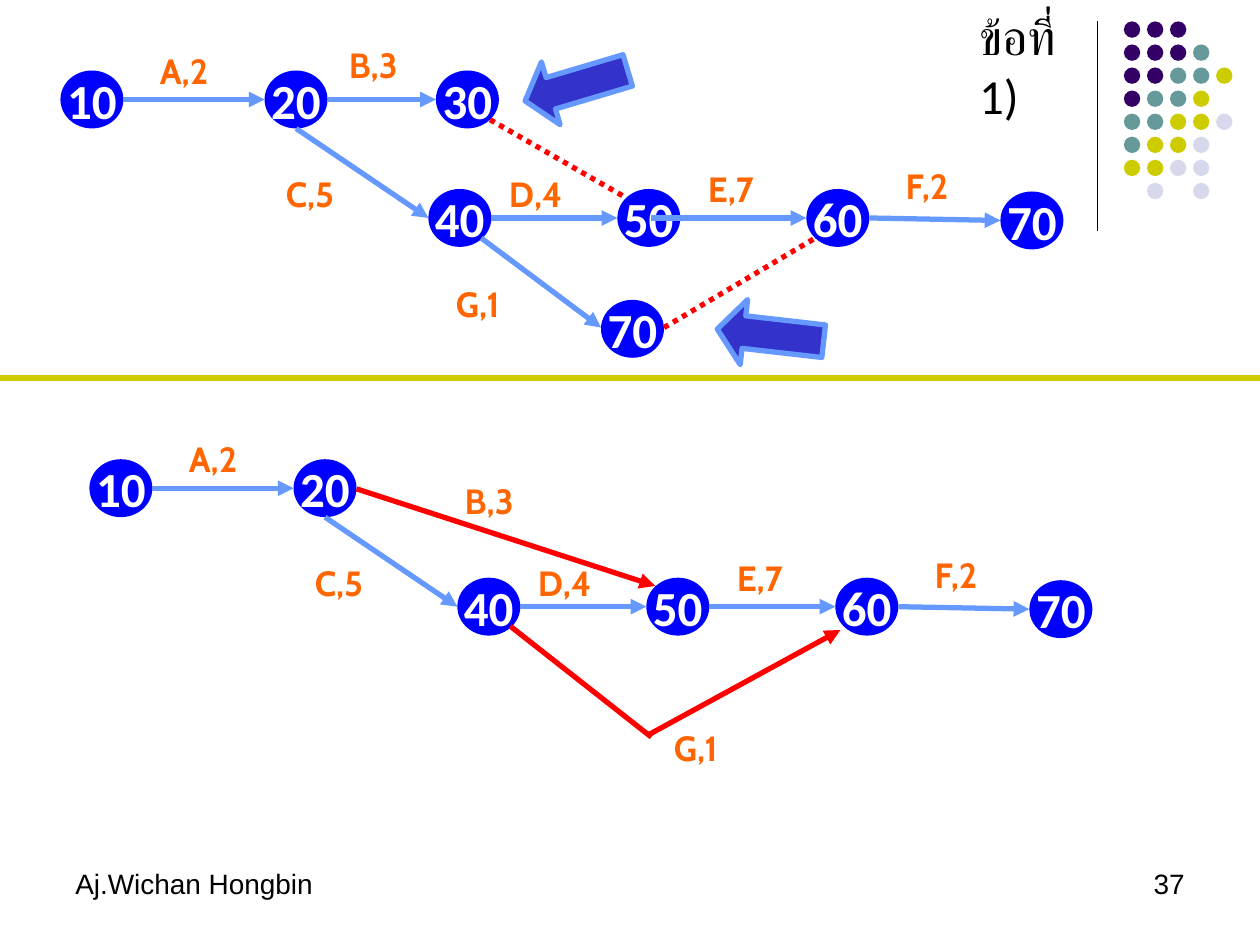
import dataclasses

import pptx
import pptx.dml.color
import pptx.enum.dml
import pptx.enum.shapes
import pptx.enum.text
import pptx.oxml.ns
import pptx.util
import lxml.etree

ALIGN = pptx.enum.text.PP_ALIGN
ANCHOR = pptx.enum.text.MSO_ANCHOR
SHAPE = pptx.enum.shapes.MSO_SHAPE
DOTTED = pptx.enum.dml.MSO_LINE.ROUND_DOT


@dataclasses.dataclass(frozen=True)
class Theme:
    ink: str = "000000"
    white: str = "FFFFFF"
    node: str = "0000FF"
    flow: str = "6699FF"
    label: str = "FF6600"
    alert: str = "FF0000"
    pointer: str = "3333CC"
    purple: str = "330066"
    teal: str = "669999"
    lime: str = "CCCC00"
    pale: str = "D8D8EC"
    heading_size: int = 28
    label_size: int = 20
    footer_size: int = 16
    heading_font: str = "Calibri"
    label_font: str = "Cabin"
    footer_font: str = "Arial"
    hairline: float = 0.75
    stroke: float = 3


class Sketch:
    """Draws on one page; positions are columns and rows of a 100 x 75 grid."""

    def __init__(self, deck, theme):
        self.theme = theme
        self.column = deck.slide_width / 100
        self.row = deck.slide_height / 75
        self.page = deck.slides.add_slide(deck.slide_layouts[5])

    def place(self, x, y):
        return round(x * self.column), round(y * self.row)

    def color(self, value):
        return pptx.dml.color.RGBColor.from_string(value)

    def set_text(self, box, words, font, size, color, bold=False,
                 align=ALIGN.LEFT, anchor=ANCHOR.TOP, wrap=False):
        frame = box.text_frame
        frame.word_wrap = wrap
        frame.vertical_anchor = anchor
        para = frame.paragraphs[0]
        para.alignment = align
        span = para.add_run()
        span.text = words
        span.font.name = font
        span.font.size = pptx.util.Pt(size)
        span.font.bold = bold
        span.font.color.rgb = self.color(color)

    def title(self, words, x, y, width, height):
        box = self.page.shapes.title
        box.left, box.top = self.place(x, y)
        box.width, box.height = self.place(width, height)
        self.set_text(box, words, self.theme.heading_font, self.theme.heading_size,
                      self.theme.ink, wrap=True)
        box.text_frame.auto_size = pptx.enum.text.MSO_AUTO_SIZE.NONE

    def footer(self, words, x, align):
        box = self.page.shapes.add_textbox(*self.place(x, 68.3), *self.place(23.3, 5))
        self.set_text(box, words, self.theme.footer_font, self.theme.footer_size,
                      self.theme.ink, align=align, wrap=True)

    def label(self, words, x, y):
        box = self.page.shapes.add_textbox(*self.place(x, y), *self.place(6.6, 4.3))
        self.set_text(box, words, self.theme.label_font, self.theme.label_size,
                      self.theme.label, bold=True)

    def shape(self, kind, x, y, width, height, fill, parent=None):
        shape = (parent or self.page).shapes.add_shape(
            kind, *self.place(x, y), *self.place(width, height))
        shape.shadow.inherit = False
        shape.fill.solid()
        shape.fill.fore_color.rgb = self.color(fill)
        shape.line.fill.background()
        return shape

    def node(self, words, x, y):
        circle = self.shape(SHAPE.OVAL, x, y, 5, 4.6, self.theme.node)
        self.set_text(circle, words, self.theme.heading_font, self.theme.heading_size,
                      self.theme.white, bold=True, align=ALIGN.CENTER,
                      anchor=ANCHOR.MIDDLE)

    def pointer(self, x, y, angle):
        arrow = self.shape(SHAPE.LEFT_ARROW, x, y, 8.5, 5.2, self.theme.pointer)
        arrow.adjustments[0] = 0.5
        arrow.adjustments[1] = 0.41
        arrow.rotation = angle
        arrow.line.color.rgb = self.color(self.theme.flow)
        arrow.line.width = pptx.util.Pt(self.theme.stroke)

    def line(self, start, end, color, width=None, dash=None, head=False, parent=None):
        line = (parent or self.page).shapes.add_connector(
            pptx.enum.shapes.MSO_CONNECTOR.STRAIGHT,
            *self.place(*start), *self.place(*end))
        line.line.color.rgb = self.color(color)
        line.line.width = pptx.util.Pt(width or self.theme.stroke)
        if dash:
            line.line.dash_style = dash
        qualify = pptx.oxml.ns.qn
        properties = line.element.spPr
        if head:
            lxml.etree.SubElement(properties.find(qualify("a:ln")),
                                  qualify("a:tailEnd"), type="triangle")
        lxml.etree.SubElement(properties, qualify("a:effectLst"))

    def arrow(self, start, end, color=None, parent=None):
        self.line(start, end, color or self.theme.flow, head=True, parent=parent)

    def dots(self, x, y, pitch, pattern):
        colors = {"P": self.theme.purple, "T": self.theme.teal,
                  "L": self.theme.lime, "G": self.theme.pale}
        group = self.page.shapes.add_group_shape()
        for row, marks in enumerate(pattern):
            for column, mark in enumerate(marks):
                if mark in colors:
                    self.shape(SHAPE.OVAL, x + column * pitch, y + row * pitch,
                               1.3, 1.3, colors[mark], group)

    def network(self, dx, dy, nodes, labels, arrows):
        for words, x, y in nodes:
            self.node(words, x + dx, y + dy)
        for x1, y1, x2, y2 in arrows:
            self.arrow((x1 + dx, y1 + dy), (x2 + dx, y2 + dy))
        for words, x, y in labels:
            self.label(words, x + dx, y + dy)


# Parts of the network that both diagrams share
NODES = [("10", 4.8, 5.6), ("20", 21, 5.6), ("40", 34, 15),
         ("50", 49, 15), ("60", 64, 15), ("70", 79.4, 15.2)]
LABELS = [("A,2", 11.7, 3.4), ("C,5", 21.7, 13.2), ("D,4", 39.4, 13.2),
          ("E,7", 55.2, 12.8), ("F,2", 70.9, 12.6)]
ARROWS = [(9.8, 7.9, 21, 7.9), (23.5, 10.2, 34, 17.3),
          (39, 17.3, 49, 17.3), (69, 17.3, 79.4, 17.5)]


def main():
    deck = pptx.Presentation()
    deck.slide_width = pptx.util.Inches(10)
    deck.slide_height = pptx.util.Inches(7.5)
    theme = Theme()
    sketch = Sketch(deck, theme)

    # Corner ornament
    sketch.line((87.1, 1.7), (87.1, 18.3), theme.ink, theme.hairline)
    sketch.dots(89.2, 1.7, 1.83, ["PPP", "PPPT", "PPTTL", "PTTL",
                                  "TTLLG", "TLLG", "LLGG", "-G-G"])

    # Heading and footer
    sketch.title("ข้อที่ 1)", 76.7, 0, 9.6, 10)
    sketch.footer("Aj.Wichan Hongbin", 5, ALIGN.LEFT)
    sketch.footer("37", 71.7, ALIGN.RIGHT)

    # Upper network: loose ends tied by dotted lines
    sketch.network(
        0, 0,
        NODES + [("30", 34.6, 5.6), ("70", 47.7, 23.8)],
        LABELS + [("B,3", 26.7, 3), ("G,1", 35.2, 21.9)],
        ARROWS + [(26, 7.9, 34.6, 7.9), (51.7, 17.3, 64, 17.3),
                  (38.2, 18.9, 47.7, 26)])
    sketch.line((38.9, 9.5), (49.7, 15.7), theme.alert, dash=DOTTED)
    sketch.line((52.7, 26), (64.7, 18.9), theme.alert, dash=DOTTED)

    # Lower network: corrected paths in red
    sketch.network(
        2.3, 30.85, NODES,
        LABELS + [("B,3", 33.6, 6.75), ("G,1", 50.2, 26.35)],
        ARROWS + [(54, 17.3, 64, 17.3)])
    sketch.arrow((28.3, 38.8), (52, 46.5), theme.alert)
    detour = sketch.page.shapes.add_group_shape()
    sketch.line((40.5, 49.7), (51.7, 58.5), theme.alert, parent=detour)
    sketch.arrow((51.5, 58.3), (66.7, 50), theme.alert, parent=detour)

    # Divider and pointers
    sketch.line((0, 30), (100, 30), theme.lime)
    sketch.pointer(41.5, 4.2, 343.4)
    sketch.pointer(56.9, 24, 6.5)

    deck.save("out.pptx")


if __name__ == "__main__":
    main()
